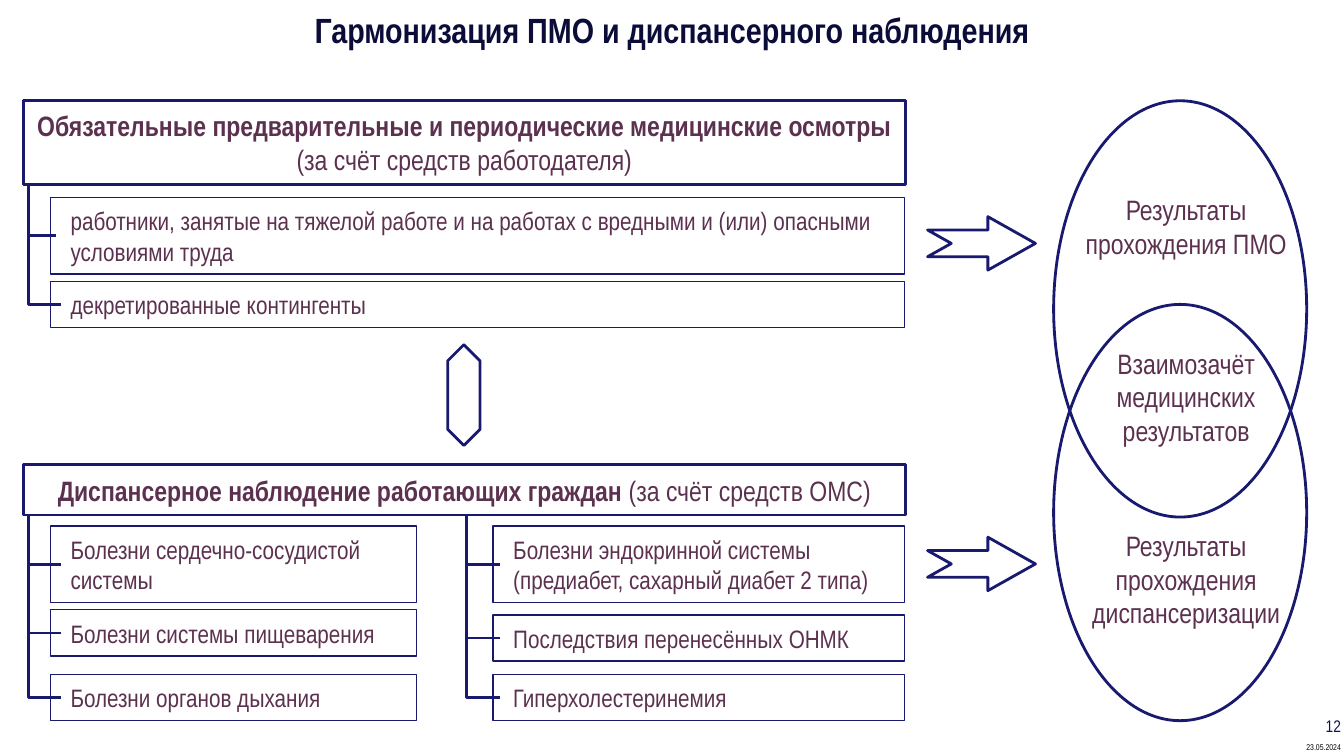
"""Builds the slide on harmonising medical check-ups and dispensary follow-up."""
from pptx import Presentation
from pptx.dml.color import RGBColor
from pptx.enum import shapes, text
from pptx.util import Inches, Pt

SHAPE = shapes.MSO_SHAPE
ALIGN = text.PP_ALIGN
NAVY, PLUM, INK, BLACK = "191970", "5C314F", "0C0C38", "000000"


def rgb(code):
    """Turn a hex string into a colour."""
    return RGBColor.from_string(code)


class SlideBuilder:
    """Holds the style and the current slide."""

    font = "Arial Narrow"

    def __init__(self, deck):
        """Add a title-only slide to the deck."""
        self.slide = deck.slides.add_slide(deck.slide_layouts[5])

    def fill_text(self, box, spans, size, color=PLUM, align=ALIGN.CENTER, **frame_format):
        """Fill a box with (text, bold) spans, breaking lines at newlines."""
        frame = box.text_frame
        edge = Inches(0.08)
        values = dict(word_wrap=True, vertical_anchor=text.MSO_ANCHOR.MIDDLE,
                      margin_left=edge, margin_top=edge, margin_right=edge, margin_bottom=edge)
        values.update(frame_format)
        for name, value in values.items():
            setattr(frame, name, value)
        para = frame.paragraphs[0]
        para.alignment = align
        for words, bold in spans:
            for index, line in enumerate(words.split("\n")):
                if index:
                    para.add_line_break()
                if line:
                    span = para.add_run()
                    span.text = line
                    for name, value in dict(name=self.font, size=Pt(size), bold=bold).items():
                        setattr(span.font, name, value)
                    span.font.color.rgb = rgb(color)

    def title(self, place, words):
        """Place and format the title."""
        box = self.slide.shapes.title
        for name, value in zip(("left", "top", "width", "height"), place):
            setattr(box, name, Inches(value))
        self.fill_text(box, [(words, True)], 25, INK)

    def label(self, place, words, size=20, **style):
        """Add plain text."""
        box = self.slide.shapes.add_textbox(*map(Inches, place))
        self.fill_text(box, [(words, False)], size, **style)

    def outline(self, shape, weight=2):
        """Give a shape a navy line, no fill and no shadow."""
        shape.shadow.inherit = False
        shape.fill.background()
        shape.line.color.rgb = rgb(NAVY)
        shape.line.width = Pt(weight)
        return shape

    def figure(self, kind, place, adjust=(), weight=2):
        """Add an outlined preset shape."""
        shape = self.slide.shapes.add_shape(kind, *map(Inches, place))
        for index, value in enumerate(adjust):
            shape.adjustments[index] = value
        return self.outline(shape, weight)

    def heading(self, top, height, spans):
        """Add the heading box of a group."""
        self.fill_text(self.figure(SHAPE.RECTANGLE, (0.23, top, 8.75, height)), spans, 20)

    def branch(self, trunk, start, left, width, items):
        """Add boxes, each joined by an elbow to the trunk."""
        for top, height, reach, words in items:
            box = self.figure(SHAPE.RECTANGLE, (left, top, width, height), weight=1)
            self.fill_text(box, [(words, False)], 18, align=ALIGN.LEFT, margin_left=Inches(0.2))
            self.elbow(trunk, start, top + height / 2, reach)

    def elbow(self, x, top, bottom, reach):
        """Draw a line down and then to the right."""
        pen = self.slide.shapes.build_freeform(Inches(x), Inches(top))
        corners = [(x, bottom), (x + reach, bottom)]
        pen.add_line_segments([(Inches(a), Inches(b)) for a, b in corners], close=False)
        self.outline(pen.convert_to_shape())


def main():
    """Build and save the deck."""
    deck = Presentation()
    deck.slide_width, deck.slide_height = Inches(13.33), Inches(7.5)
    page = SlideBuilder(deck)
    page.title((0.17, 0, 12.99, 0.58), "Гармонизация ПМО и диспансерного наблюдения")

    page.heading(1, 0.83, [
        ("Обязательные предварительные и периодические медицинские осмотры\n", True),
        ("(за счёт средств работодателя)", False)])
    page.branch(0.28, 1.83, 0.5, 8.47, [
        (1.96, 0.76, 0.28, "работники, занятые на тяжелой работе и на работах "
                           "с вредными и (или) опасными условиями труда"),
        (2.79, 0.46, 0.33, "декретированные контингенты")])

    page.heading(4.61, 0.5, [("Диспансерное наблюдение работающих граждан ", True),
                             ("(за счёт средств ОМС)", False)])
    page.branch(0.28, 5.1, 0.5, 3.63, [
        (5.22, 0.76, 0.33, "Болезни сердечно-сосудистой системы"),
        (6.05, 0.46, 0.33, "Болезни системы пищеварения"),
        (6.69, 0.46, 0.33, "Болезни органов дыхания")])
    page.branch(4.63, 5.1, 4.89, 4.08, [
        (5.22, 0.76, 0.33, "Болезни эндокринной системы\n(предиабет, сахарный диабет 2 типа)"),
        (6.1, 0.46, 0.33, "Последствия перенесённых ОНМК"),
        (6.69, 0.46, 0.33, "Гиперхолестеринемия")])

    page.figure(SHAPE.UP_DOWN_ARROW, (4.44, 3.42, 0.32, 1), (0.47, 1.18))
    for arrow_top, oval_top in ((2.15, 1), (5.33, 3.02)):
        page.figure(SHAPE.NOTCHED_RIGHT_ARROW, (9.2, arrow_top, 1.07, 0.53), (0.5, 0.89))
        page.figure(SHAPE.OVAL, (10.45, oval_top, 2.51, 4.13))

    for top, height, words in ((1.83, 0.83, "Результаты прохождения ПМО"),
                               (3.35, 1.17, "Взаимозачёт медицинских результатов"),
                               (5.16, 1.17, "Результаты прохождения диспансеризации")):
        page.label((10.32, top, 2.77, height), words, margin_left=Inches(0.2))

    edge = Inches(0.04)
    corner = dict(align=ALIGN.RIGHT, margin_left=edge, margin_top=edge, margin_right=edge)
    page.label((12.91, 7.06, 0.43, 0.24), "12", 12, color="131354", margin_bottom=0, **corner)
    page.label((12.91, 7.32, 0.43, 0.18), "23.05.2024", 6, color=BLACK, margin_bottom=edge,
               word_wrap=False, **corner)
    deck.save("out.pptx")


if __name__ == "__main__":
    main()
